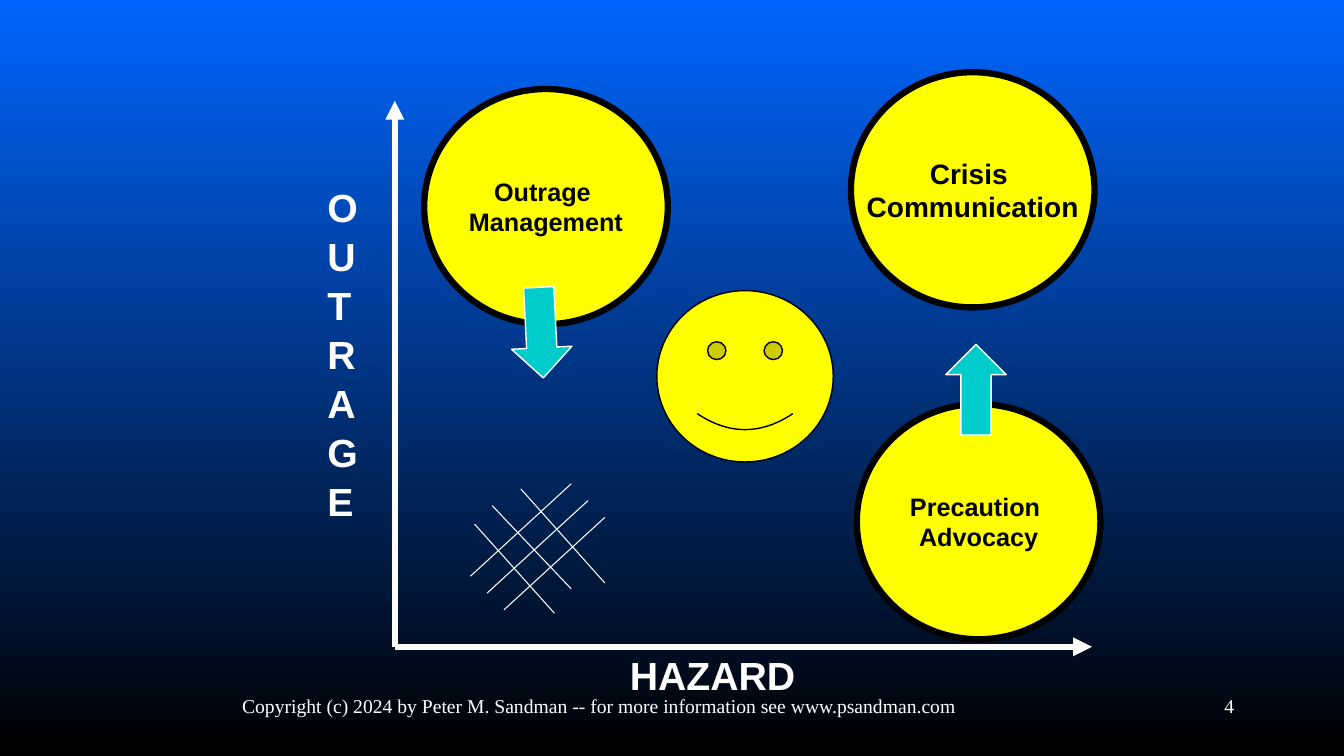
from lxml.etree import SubElement
from pptx import Presentation
from pptx.dml.color import RGBColor
from pptx.enum.shapes import MSO_CONNECTOR, MSO_SHAPE
from pptx.enum.text import MSO_ANCHOR, PP_ALIGN
from pptx.oxml.ns import qn
from pptx.util import Inches, Pt

WHITE = RGBColor(0xFF, 0xFF, 0xFF)
BLACK = RGBColor(0x00, 0x00, 0x00)
BLUE = RGBColor(0x00, 0x66, 0xFF)
YELLOW = RGBColor(0xFF, 0xFF, 0x00)
TEAL = RGBColor(0x00, 0xCC, 0xCC)

COLUMNS, ROWS = 160, 90


class RiskMap:
    """Draws on one slide; all positions are (column, row) on a 160 by 90 grid."""

    def __init__(self, deck):
        self.slide = deck.slides.add_slide(deck.slide_layouts[6])
        self.shapes = self.slide.shapes
        self.column = deck.slide_width / COLUMNS
        self.row = deck.slide_height / ROWS

    def grid(self, *cells):
        """Turn alternating columns and rows into lengths."""
        return [round(cell * (self.row if i % 2 else self.column))
                for i, cell in enumerate(cells)]

    def background(self, top, bottom):
        fill = self.slide.background.fill
        fill.gradient()
        fill.gradient_angle = 270
        for stop, color, position in zip(fill.gradient_stops, (top, bottom), (0, 1)):
            stop.color.rgb = color
            stop.position = position

    def set_lines(self, frame, lines, size, color, align, font="Arial", bold=True):
        frame.text = "\n".join(lines)
        for paragraph in frame.paragraphs:
            paragraph.alignment = align
            paragraph.font.name = font
            paragraph.font.size = Pt(size)
            paragraph.font.bold = bold
            paragraph.font.color.rgb = color

    def text(self, box, words, size=28, align=PP_ALIGN.LEFT, wrap=True, **style):
        frame = self.shapes.add_textbox(*self.grid(*box)).text_frame
        frame.word_wrap = wrap
        self.set_lines(frame, [words], size, WHITE, align, **style)
        return frame

    def footer(self, box, words, align):
        self.text(box, words, 14, align, font="Times New Roman", bold=False)

    def shape(self, kind, box, fill, line, width):
        shape = self.shapes.add_shape(kind, *self.grid(*box))
        shape.shadow.inherit = False
        shape.fill.solid()
        shape.fill.fore_color.rgb = fill
        shape.line.color.rgb = line
        shape.line.width = Pt(width)
        return shape

    def circle(self, left, top, lines, size):
        circle = self.shape(MSO_SHAPE.OVAL, (left, top, 29, 28), YELLOW, BLACK, 4.5)
        frame = circle.text_frame
        frame.word_wrap = False
        frame.vertical_anchor = MSO_ANCHOR.MIDDLE
        self.set_lines(frame, lines, size, BLACK, PP_ALIGN.CENTER)

    def block_arrow(self, left, top, rotation=0):
        arrow = self.shape(MSO_SHAPE.UP_ARROW, (left, top, 7.2, 10.8), TEAL, WHITE, 1)
        arrow.rotation = rotation

    def line(self, start, end, width=0.75, arrow=False):
        line = self.shapes.add_connector(
            MSO_CONNECTOR.STRAIGHT, *self.grid(*start, *end))
        line.line.color.rgb = WHITE
        line.line.width = Pt(width)
        properties = line.element.spPr
        if arrow:
            SubElement(properties.find(qn("a:ln")), qn("a:tailEnd"), type="triangle")
        SubElement(properties, qn("a:effectLst"))


def main():
    deck = Presentation()
    deck.slide_width, deck.slide_height = Inches(13.33), Inches(7.5)
    risk_map = RiskMap(deck)
    risk_map.background(BLUE, BLACK)

    origin = (47, 77)
    for axis_end in ((47, 12), (130, 77)):
        risk_map.line(origin, axis_end, 4.5, arrow=True)
    risk_map.text((73.8, 77, 22.2, 6.8), "HAZARD", wrap=False)
    # The narrow box stacks the letters one to a line
    outrage = risk_map.text((37.8, 21, 6.2, 40.4), "OUTRAGE")
    outrage.paragraphs[0].line_spacing = 1.04

    risk_map.circle(101.3, 8.6, ["Crisis ", "Communication"], 20)
    risk_map.circle(50.5, 10.6, ["Outrage ", "Management"], 18)
    risk_map.circle(102, 48.1, ["Precaution ", "Advocacy"], 18)
    risk_map.block_arrow(112.6, 41)
    risk_map.block_arrow(60.8, 34.2, rotation=177.1)

    for step in (0, 2, 4):
        risk_map.line((68 + step, 57.6 + step), (56 + step, 68.6 + step))
    for start, end in (((62, 58.2), (72, 69.4)),
                       ((58.6, 60.2), (68, 70.1)),
                       ((56.5, 62.4), (66, 73))):
        risk_map.line(start, end)

    risk_map.footer((114.7, 82, 33.4, 6), "4", PP_ALIGN.RIGHT)
    risk_map.footer((10.7, 82, 121.3, 6),
                    "Copyright (c) 2024 by Peter M. Sandman -- "
                    "for more information see www.psandman.com", PP_ALIGN.CENTER)
    risk_map.shape(MSO_SHAPE.SMILEY_FACE, (78.2, 34.6, 21, 20.4), YELLOW, BLACK, 1)

    deck.save("out.pptx")


if __name__ == "__main__":
    main()
